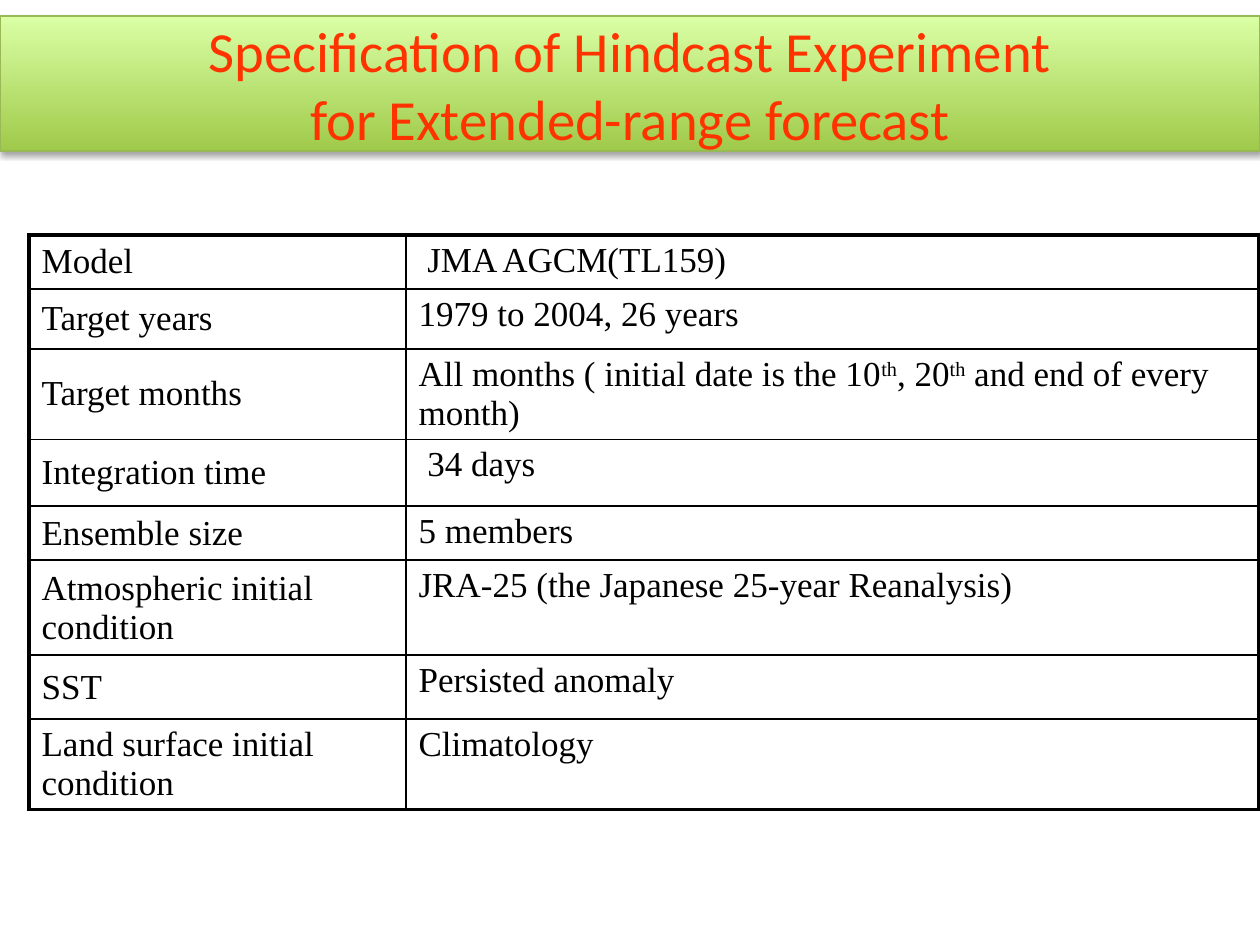
"""Build the slide with the hindcast experiment specification table."""
from dataclasses import dataclass

from lxml import etree
from pptx import Presentation
from pptx import util as u
from pptx.dml.color import RGBColor
from pptx.enum import shapes, text
from pptx.oxml import ns

PX = 914400 // 126
COLORS = {"title": "FF3300", "bottom": "A0CA4A", "top": "DAFFA5",
          "edge": "98B955", "ink": "000000"}
THIN, THICK = 1, 2.25
SUPERSCRIPT_MARK = "^"
COLUMN_WIDTHS = (377, 853)


@dataclass(frozen=True)
class Box:
    left: int
    top: int
    width: int
    height: int

    def emu(self) -> list[int]:
        return [n * PX for n in (self.left, self.top, self.width, self.height)]


@dataclass(frozen=True)
class Row:
    label: str
    value: str
    height: int


ROWS = (
    Row("Model", " JMA AGCM(TL159)", 54),
    Row("Target years", "1979 to 2004, 26 years", 60),
    Row("Target months", "All months ( initial date is the 10^th^, 20^th^ and end of every month)", 90),
    Row("Integration time", " 34 days", 67),
    Row("Ensemble size", "5 members", 54),
    Row("Atmospheric initial condition", "JRA-25 (the Japanese 25-year Reanalysis)", 95),
    Row("SST", "Persisted anomaly", 64),
    Row("Land surface initial condition", "Climatology", 90),
)


def color(name: str) -> RGBColor:
    return RGBColor.from_string(COLORS[name])


def child(parent, tag: str, **attributes):
    element = etree.SubElement(parent, ns.qn(tag))
    for name, value in attributes.items():
        element.set(name, str(value))
    return element


def format_run(run, font: str, size: float, color_name: str) -> None:
    run.font.name = font
    run.font.size = u.Pt(size)
    run.font.color.rgb = color(color_name)


def add_shadow(shape) -> None:
    effects = child(shape._element.spPr, "a:effectLst")
    shadow = child(effects, "a:outerShdw", blurRad=u.Pt(3.1), dist=u.Pt(1.8),
                   dir=90 * 60000, rotWithShape=0)
    tint = child(shadow, "a:srgbClr", val=COLORS["ink"])
    child(tint, "a:alpha", val=35000)


def add_title(slide, box: Box, title: str) -> None:
    shape = slide.shapes.add_shape(shapes.MSO_SHAPE.RECTANGLE, *box.emu())
    shape.fill.gradient()
    shape.fill.gradient_angle = 90
    for stop, name in zip(shape.fill.gradient_stops, ("bottom", "top")):
        stop.color.rgb = color(name)
    shape.line.color.rgb = color("edge")
    shape.line.width = u.Pt(0.75)
    add_shadow(shape)
    shape.text_frame.word_wrap = True
    shape.text_frame.vertical_anchor = text.MSO_ANCHOR.MIDDLE
    paragraph = shape.text_frame.paragraphs[0]
    paragraph.text = title
    paragraph.alignment = text.PP_ALIGN.CENTER
    for run in paragraph.runs:
        format_run(run, "Calibri", 32.4, "title")


def set_borders(cell, widths: dict[str, float]) -> None:
    properties = cell._tc.get_or_add_tcPr()
    for index, (side, width) in enumerate(widths.items()):
        line = child(properties, f"a:ln{side}", w=u.Pt(width))
        fill = child(line, "a:solidFill")
        child(fill, "a:srgbClr", val=COLORS["ink"])
        properties.insert(index, line)


def fill_cell(cell, content: str) -> None:
    paragraph = cell.text_frame.paragraphs[0]
    for index, part in enumerate(content.split(SUPERSCRIPT_MARK)):
        run = paragraph.add_run()
        run.text = part
        format_run(run, "Times New Roman", 20, "ink")
        if index % 2:
            run._r.get_or_add_rPr().set("baseline", "30000")


def add_specification(slide, left: int, top: int, rows: tuple[Row, ...]) -> None:
    box = Box(left, top, sum(COLUMN_WIDTHS), sum(row.height for row in rows))
    table = slide.shapes.add_table(len(rows), len(COLUMN_WIDTHS), *box.emu()).table
    table.first_row = table.horz_banding = False
    for column, width in zip(table.columns, COLUMN_WIDTHS):
        column.width = width * PX
    last = len(rows) - 1
    for row_index, row in enumerate(rows):
        table.rows[row_index].height = row.height * PX
        for column_index, content in enumerate((row.label, row.value)):
            cell = table.cell(row_index, column_index)
            is_label = column_index == 0
            cell.fill.background()
            cell.vertical_anchor = text.MSO_ANCHOR.MIDDLE if is_label else text.MSO_ANCHOR.TOP
            fill_cell(cell, content)
            set_borders(cell, {
                "L": THICK if is_label else THIN,
                "R": THIN if is_label else THICK,
                "T": THICK if row_index == 0 else THIN,
                "B": THICK if row_index == last else THIN,
            })


def main() -> None:
    presentation = Presentation()
    presentation.slide_width, presentation.slide_height = 1260 * PX, 945 * PX
    slide = presentation.slides.add_slide(presentation.slide_layouts[6])
    add_title(slide, Box(0, 16, 1260, 135),
              "Specification of Hindcast Experiment\vfor Extended-range forecast")
    add_specification(slide, 29, 235, ROWS)
    presentation.save("out.pptx")


if __name__ == "__main__":
    main()
